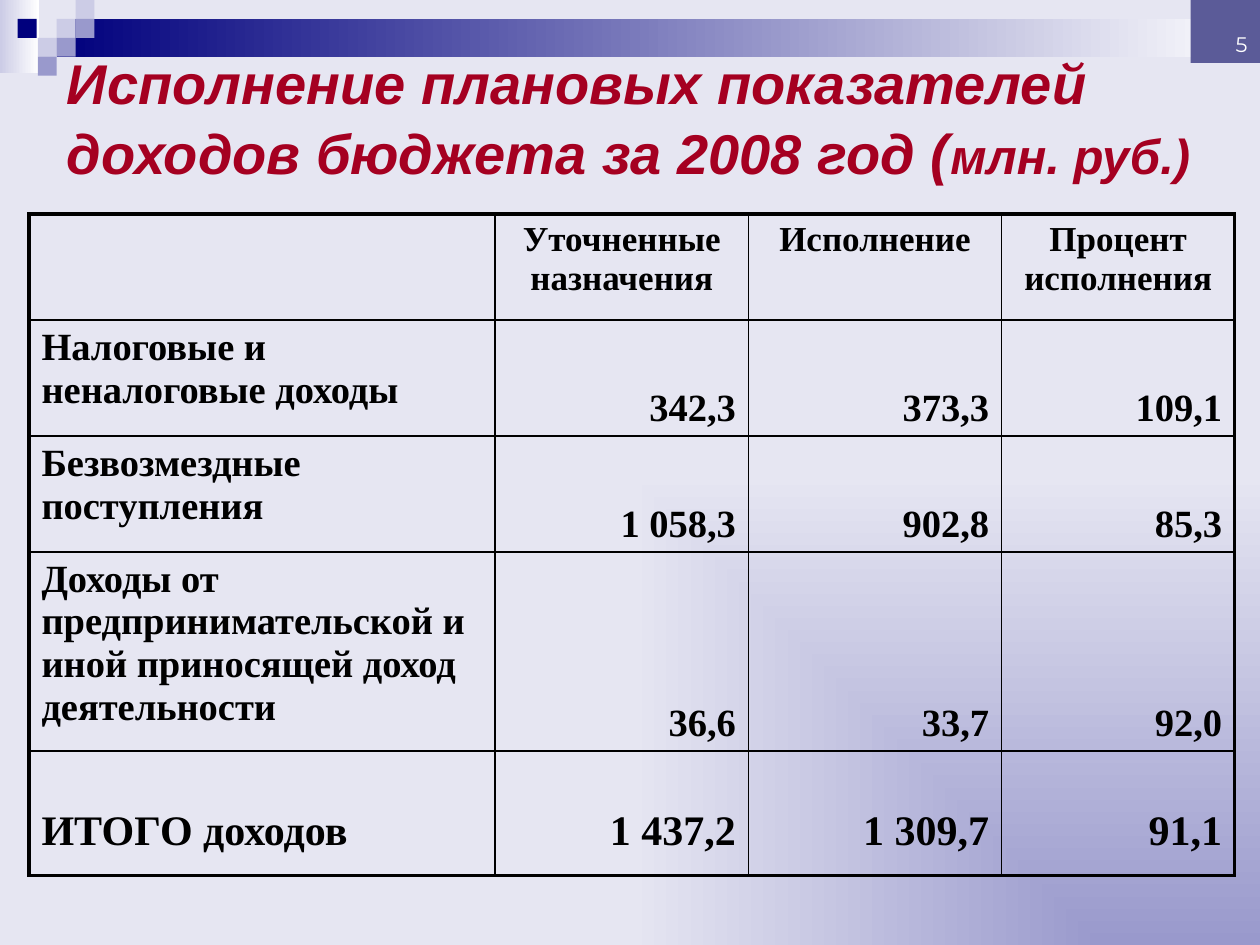
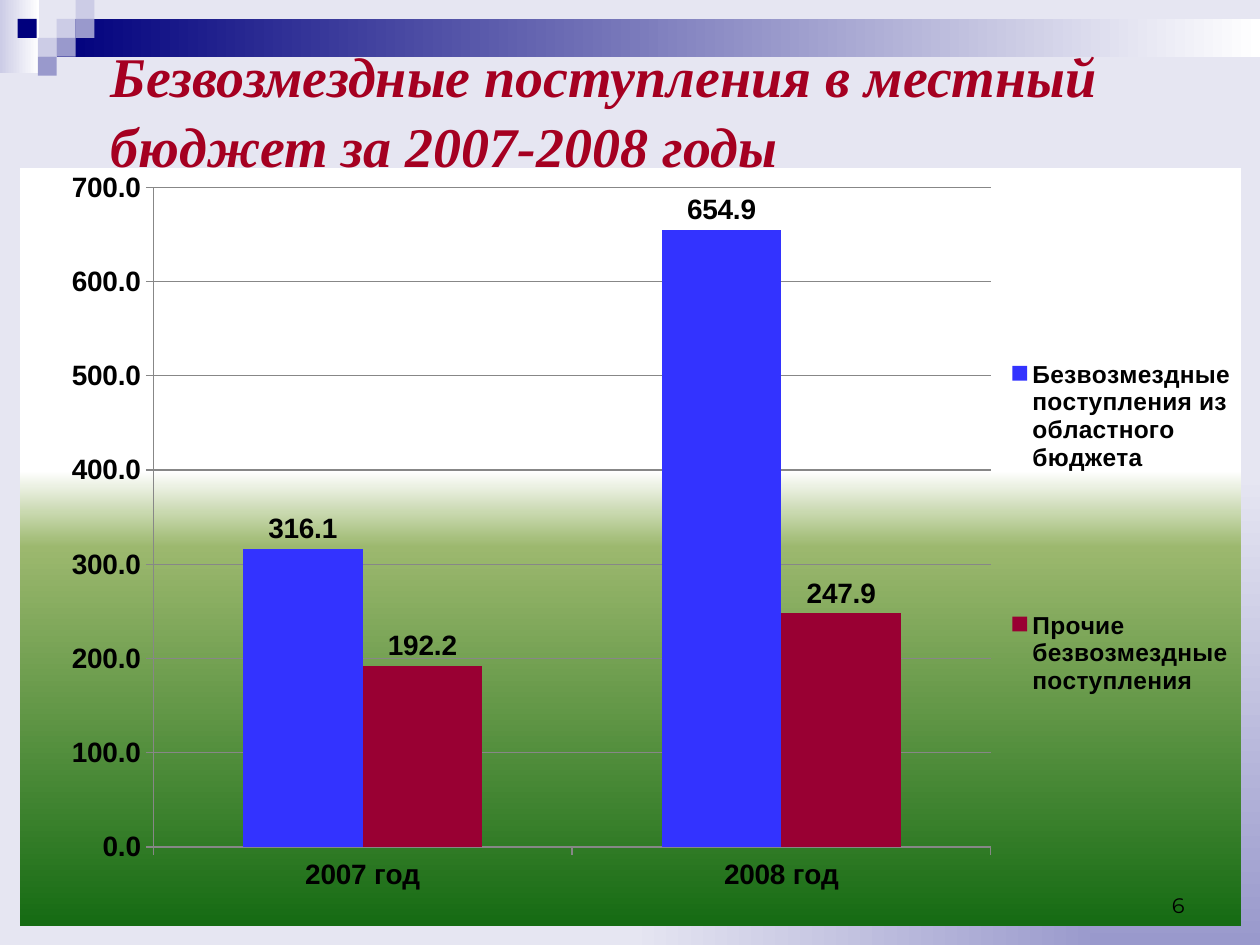
from lxml import etree
from pptx import Presentation
from pptx.chart.data import CategoryChartData
from pptx.dml.color import RGBColor
from pptx.enum import chart as charts, shapes, text
from pptx.oxml import ns
from pptx.util import Inches, Pt

NAVY = RGBColor(0x00, 0x00, 0x7D)
LAVENDER = RGBColor(0xCC, 0xCC, 0xE6)
VIOLET = RGBColor(0x99, 0x99, 0xCC)
MIST = RGBColor(0xE6, 0xE6, 0xF2)
SLATE = RGBColor(0x5B, 0x5B, 0x98)
WHITE = RGBColor(0xFF, 0xFF, 0xFF)
BLACK = RGBColor(0x00, 0x00, 0x00)
CRIMSON = RGBColor(0xA5, 0x00, 0x21)
BLUE = RGBColor(0x33, 0x33, 0xFF)
WINE = RGBColor(0x99, 0x00, 0x33)
GRAY = RGBColor(0x87, 0x87, 0x87)
OLIVE = RGBColor(0x9C, 0xB8, 0x6E)
GREEN = RGBColor(0x15, 0x6B, 0x13)

SANS, SERIF, NUMBER_FONT = "Arial", "Times New Roman", "Montserrat"
NUMBER_FORMAT = "#,##0.0"
TILE = 0.15
THIN, THICK = 1, 2.25

HEADERS = ["", "Уточненные назначения", "Исполнение", "Процент исполнения"]
INCOME = [
    ["Налоговые и неналоговые доходы", "342,3", "373,3", "109,1"],
    ["Безвозмездные поступления", "1 058,3", "902,8", "85,3"],
    ["Доходы от предпринимательской и иной приносящей доход деятельности",
     "36,6", "33,7", "92,0"],
    ["ИТОГО доходов", "1 437,2", "1 309,7", "91,1"],
]
YEARS = ["2007 год", "2008 год"]
RECEIPTS = [
    ("Безвозмездные поступления из областного бюджета", (316.1, 654.9), BLUE),
    ("Прочие безвозмездные поступления", (192.2, 247.9), WINE),
]


def inches(box):
    return [Inches(value) for value in box]


def style_font(font, name, size, color, bold=False, italic=False):
    font.name, font.size = name, Pt(size)
    font.bold, font.italic = bold, italic
    font.color.rgb = color


def add_span(para, words, *style, **emphasis):
    span = para.add_run()
    span.text = words
    style_font(span.font, *style, **emphasis)


def gradient_xml(stops, direction):
    """Gradient fill from (percent, colour) pairs and a direction element."""
    marks = "".join(f'<a:gs pos="{percent * 1000}"><a:srgbClr val="{color}"/></a:gs>'
                    for percent, color in stops)
    return (f'<a:gradFill {ns.nsdecls("a")} rotWithShape="1">'
            f'<a:gsLst>{marks}</a:gsLst>{direction}</a:gradFill>')


def set_background(master):
    master.background.fill.solid()
    solid = master._element.find(".//" + ns.qn("p:bgPr") + "/" + ns.qn("a:solidFill"))
    corner = ('<a:path path="rect"><a:fillToRect l="100000" t="100000" r="0" b="0"/>'
              '</a:path>')
    glow = etree.fromstring(gradient_xml([(0, VIOLET), (100, MIST)], corner))
    solid.getparent().replace(solid, glow)


def add_rectangle(page, box, *colors):
    """Borderless rectangle: one colour is solid, two run left to right."""
    area = page.shapes.add_shape(shapes.MSO_SHAPE.RECTANGLE, *inches(box))
    area.shadow.inherit = False
    area.line.fill.background()
    if len(colors) == 1:
        area.fill.solid()
        area.fill.fore_color.rgb = colors[0]
    else:
        area.fill.gradient()
        area.fill.gradient_angle = 0
        for stop, color in zip(area.fill.gradient_stops, colors):
            stop.color.rgb = color
    return area


def add_header_band(page):
    add_rectangle(page, (0, 0, 0.31, 0.58), LAVENDER, WHITE)
    add_rectangle(page, (0.45, TILE, 9.55, 2 * TILE), NAVY, WHITE)
    # Mosaic: column, row, colour
    for column, row, color in [(3, 1, LAVENDER), (4, 0, LAVENDER), (4, 1, VIOLET),
                               (2, 2, LAVENDER), (3, 2, VIOLET), (2, 3, VIOLET)]:
        add_rectangle(page, (column * TILE, row * TILE, TILE, TILE), color)
    add_rectangle(page, (0.14, TILE, TILE, TILE), NAVY)


def add_title(page, box, font_name, spans):
    title = page.shapes.title
    title.left, title.top, title.width, title.height = inches(box)
    frame = title.text_frame
    frame.auto_size = text.MSO_AUTO_SIZE.NONE
    frame.word_wrap = True
    frame.vertical_anchor = text.MSO_ANCHOR.MIDDLE
    para = frame.paragraphs[0]
    para.alignment = text.PP_ALIGN.LEFT
    para.line_spacing = 1.04
    for words, size in spans:
        add_span(para, words, font_name, size, CRIMSON, bold=True, italic=True)
    # Bring the title in front of the band and the chart
    page.shapes._spTree.append(title._element)


def add_page_number(page, box, number, color, fill=None):
    if fill is None:
        label = page.shapes.add_textbox(*inches(box))
    else:
        label = add_rectangle(page, box, fill)
    frame = label.text_frame
    frame.word_wrap = True
    frame.vertical_anchor = text.MSO_ANCHOR.BOTTOM
    para = frame.paragraphs[0]
    para.alignment = text.PP_ALIGN.RIGHT
    add_span(para, number, NUMBER_FONT, 12, color)


def set_borders(cell, widths):
    """Black cell borders; widths are left, right, top, bottom in points."""
    properties = cell._tc.get_or_add_tcPr()
    for side, width in zip("LRTB", widths):
        line = etree.SubElement(properties, ns.qn(f"a:ln{side}"), w=str(Pt(width)))
        paint = etree.SubElement(line, ns.qn("a:solidFill"))
        etree.SubElement(paint, ns.qn("a:srgbClr"), val=str(BLACK))


def add_income_table(page, box, column_widths, row_heights):
    rows = [HEADERS] + INCOME
    last_row, last_column = len(rows) - 1, len(HEADERS) - 1
    table = page.shapes.add_table(len(rows), len(HEADERS), *inches(box)).table
    table.first_row = table.horz_banding = False
    for column, width in zip(table.columns, column_widths):
        column.width = Inches(width)
    for row, height in zip(table.rows, row_heights):
        row.height = Inches(height)

    for r, row in enumerate(rows):
        size = 20 if r == 0 else 24 if r == last_row else 22
        for c, words in enumerate(row):
            cell = table.cell(r, c)
            edges = (c == 0, c == last_column, r == 0, r == last_row)
            set_borders(cell, [THICK if edge else THIN for edge in edges])
            cell.fill.background()
            if not words:
                continue
            para = cell.text_frame.paragraphs[0]
            if r == 0:
                para.alignment = text.PP_ALIGN.CENTER
            elif c > 0:
                para.alignment = text.PP_ALIGN.RIGHT
            if r == last_row:
                cell.margin_bottom = Inches(0.17)
            if r == last_row or (r > 0 and c > 0):
                cell.vertical_anchor = text.MSO_ANCHOR.BOTTOM
            else:
                para.space_before = Pt(size * 0.2)
            add_span(para, words, SERIF, size, BLACK, bold=True)


def layout_element(x, y, width, height, inner=False):
    target = '<c:layoutTarget val="inner"/>' if inner else ""
    sizes = "".join(f'<c:{key} val="{value}"/>'
                    for key, value in zip("xywh", (x, y, width, height)))
    return etree.fromstring(
        f'<c:layout {ns.nsdecls("c")}><c:manualLayout>{target}<c:xMode val="edge"/>'
        f'<c:yMode val="edge"/>{sizes}</c:manualLayout></c:layout>')


def place_chart_parts(chart):
    """Fix the plot and legend areas as shares of the chart."""
    plot_area = chart._chartSpace.find(".//" + ns.qn("c:plotArea"))
    legend = chart._chartSpace.find(".//" + ns.qn("c:legend"))
    for part in (plot_area, legend):
        for automatic in part.findall(ns.qn("c:layout")):
            part.remove(automatic)
    plot_area.insert(0, layout_element(0.109, 0.026, 0.686, 0.87, inner=True))
    overlay = legend.find(ns.qn("c:overlay"))
    overlay.addprevious(layout_element(0.81, 0.07, 0.19, 0.81))


def add_receipts_chart(page, box):
    data = CategoryChartData(number_format=NUMBER_FORMAT)
    data.categories = YEARS
    for name, values, _ in RECEIPTS:
        data.add_series(name, values)
    chart = page.shapes.add_chart(charts.XL_CHART_TYPE.COLUMN_CLUSTERED,
                                  *inches(box), data).chart
    chart.has_title = False
    style_font(chart.font, SANS, 12, BLACK, bold=True)

    # Axes
    for axis in (chart.category_axis, chart.value_axis):
        style_font(axis.tick_labels.font, SANS, 16, BLACK, bold=True)
        axis.format.line.color.rgb = GRAY
        axis.major_tick_mark = charts.XL_TICK_MARK.OUTSIDE
    values_axis = chart.value_axis
    values_axis.minimum_scale, values_axis.maximum_scale = 0, 700
    values_axis.major_unit = 100
    values_axis.tick_labels.number_format = NUMBER_FORMAT
    values_axis.tick_labels.number_format_is_linked = False
    values_axis.major_gridlines.format.line.color.rgb = GRAY

    # Columns and their labels
    plot = chart.plots[0]
    plot.gap_width, plot.overlap, plot.vary_by_categories = 150, 0, False
    for series, (_, _, color) in zip(plot.series, RECEIPTS):
        series.format.fill.solid()
        series.format.fill.fore_color.rgb = color
        labels = series.data_labels
        labels.show_value = True
        labels.position = charts.XL_LABEL_POSITION.OUTSIDE_END
        labels.number_format, labels.number_format_is_linked = NUMBER_FORMAT, False
        style_font(labels.font, SANS, 16, BLACK, bold=True)

    # Legend
    chart.has_legend = True
    chart.legend.position = charts.XL_LEGEND_POSITION.RIGHT
    chart.legend.include_in_layout = False
    style_font(chart.legend.font, SANS, 14, BLACK, bold=True)
    place_chart_parts(chart)

    # Chart ground
    ground = gradient_xml([(40, WHITE), (50, OLIVE), (100, GREEN)],
                          '<a:lin ang="5400000" scaled="0"/>')
    chart._chartSpace.find(ns.qn("c:chart")).addnext(etree.fromstring(
        f'<c:spPr {ns.nsdecls("c", "a")}>{ground}<a:ln><a:noFill/></a:ln></c:spPr>'))


def build_income_page(page):
    add_header_band(page)
    add_title(page, (0.43, 0.52, 9.57, 0.8), SANS,
              [("Исполнение плановых показателей доходов бюджета за 2008 год (", 32),
               ("млн. руб.)", 28)])
    add_income_table(page, (0.23, 1.7, 9.57, 5.25),
                     (3.7, 2.01, 2.01, 1.85), (0.84, 0.92, 0.92, 1.58, 0.99))
    add_page_number(page, (9.45, 0, 0.55, 0.5), "5", WHITE, SLATE)


def build_receipts_page(page):
    add_header_band(page)
    add_receipts_chart(page, (0.16, 1.33, 9.69, 6.02))
    add_title(page, (0.78, 0.55, 8.59, 0.62), SERIF,
              [("Безвозмездные поступления в местный бюджет за 2007-2008 годы", 32)])
    add_page_number(page, (8.91, 6.83, 0.59, 0.5), "6", BLACK)


def main():
    deck = Presentation()
    deck.slide_width, deck.slide_height = Inches(10), Inches(7.5)
    set_background(deck.slide_master)
    title_only = deck.slide_layouts[5]
    for build in (build_income_page, build_receipts_page):
        build(deck.slides.add_slide(title_only))
    deck.save("out.pptx")


if __name__ == "__main__":
    main()
